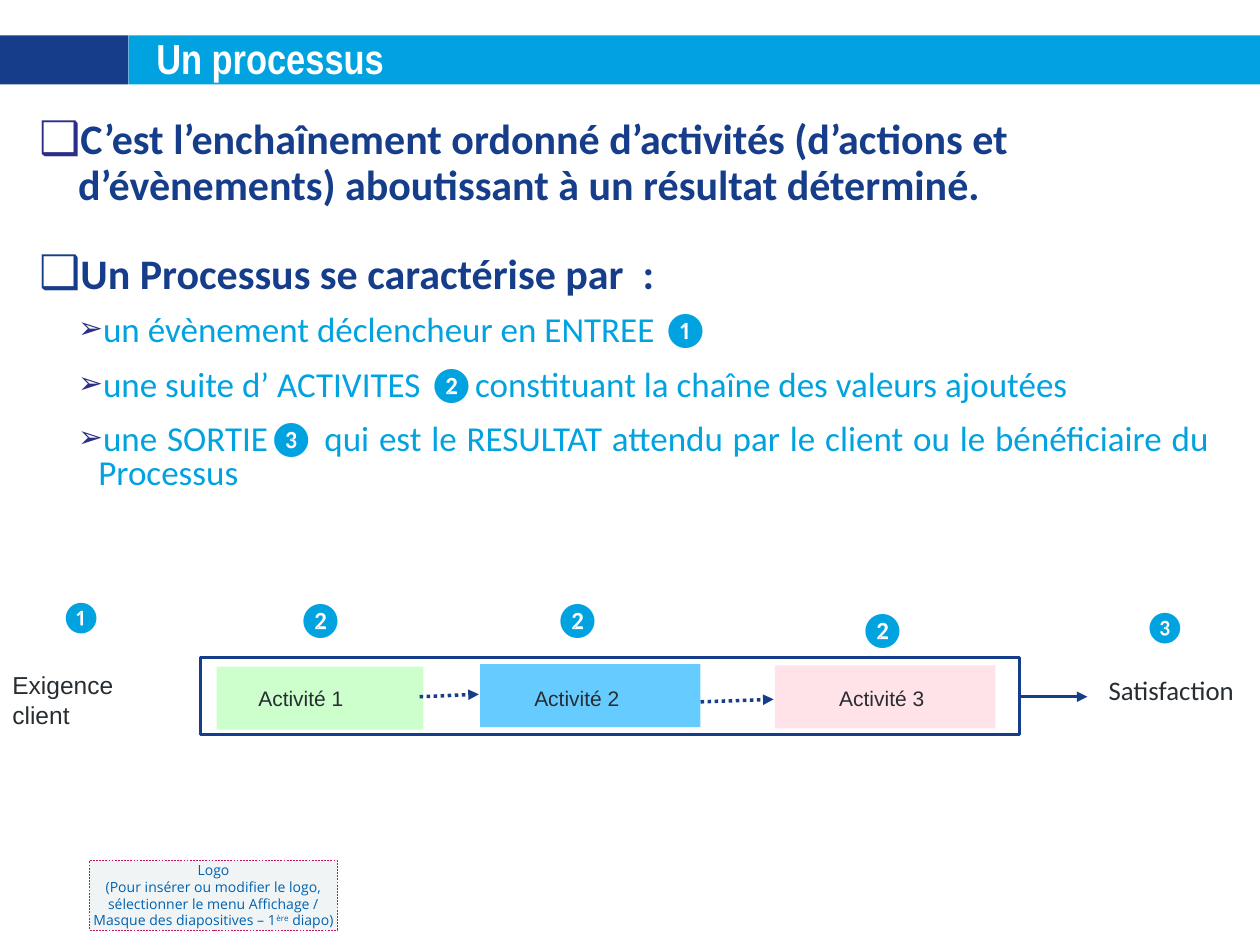
"""Build the slide that defines a process and draws its chain of activities."""
from dataclasses import dataclass
from typing import Any, Optional

import lxml.etree
import pptx
import pptx.dml.color
import pptx.enum.dml
import pptx.enum.shapes
import pptx.enum.text
import pptx.oxml.ns
import pptx.util

NAVY, SKY, INK, VIOLET = "153D8A", "00A2E0", "272D31", "2D2D8A"
WIDTH, HEIGHT = pptx.util.Inches(10), pptx.util.Inches(7.5)
ALIGN = pptx.enum.text.PP_ALIGN
ANCHOR = pptx.enum.text.MSO_ANCHOR
DASH = pptx.enum.dml.MSO_LINE


@dataclass(frozen=True)
class Area:
    """Left, top, width and height in percent of the slide."""
    left: float
    top: float
    width: float
    height: float


@dataclass(frozen=True)
class Style:
    """Size, colour, typeface and weight of a text."""
    size: float
    color: str
    face: str = "Calibri"
    bold: bool = False


@dataclass(frozen=True)
class Label:
    """A text box of the diagram."""
    text: str
    area: Area
    style: Style
    inset: float = 0.02
    anchor: Any = ANCHOR.TOP
    align: Any = ALIGN.LEFT


@dataclass(frozen=True)
class Box:
    """A rectangle with an optional fill and outline."""
    area: Area
    fill: Optional[str] = None
    line: Optional[str] = None
    weight: float = 2
    dash: Any = None


@dataclass(frozen=True)
class Arrow:
    """An arrow between two points in percent of the slide."""
    start: tuple[float, float]
    end: tuple[float, float]
    dash: Any = None


@dataclass(frozen=True)
class Level:
    """Look of one level of the list."""
    style: Style
    bullet: str
    bullet_size: int
    margin: float
    hang: float
    line_spacing: float
    before: float
    after: float


@dataclass(frozen=True)
class Item:
    """One entry of the list."""
    text: str
    level: int
    align: Any = ALIGN.LEFT
    bullet_color: str = VIOLET


LEVELS = (
    Level(Style(24, NAVY, bold=True), "❑", 110, 0.31, 0.31, 0.9, 15, 10),
    Level(Style(20, SKY), "➢", 85, 0.47, 0.16, 0.8, 0, 12),
)
ITEMS = (
    Item("C’est l’enchaînement ordonné d’activités (d’actions et d’évènements) "
         "aboutissant à un résultat déterminé.", 0),
    Item("Un Processus se caractérise par  :", 0, bullet_color=NAVY),
    Item("un évènement déclencheur en ENTREE ❶", 1),
    Item("une suite d’ ACTIVITES ❷constituant la chaîne des valeurs ajoutées", 1, ALIGN.JUSTIFY),
    Item("une SORTIE❸ qui est le RESULTAT attendu par le client ou le bénéficiaire "
         "du Processus", 1, ALIGN.JUSTIFY),
)
BARS = (Box(Area(0, 3.73, 10.2, 5.2), NAVY), Box(Area(10.2, 3.73, 89.8, 5.2), SKY))
LOGO = Box(Area(7.1, 91.07, 19.7, 7.33), "F1F4F5", "C01662", 0.25, DASH.DASH)
LOGO_TEXT = (("Logo",), ("(Pour insérer ou modifier le logo, sélectionner le menu Affichage / "
                         "Masque des diapositives – 1", "ère", " diapo)"))
PROCESS = (
    Box(Area(15.9, 69.6, 65, 8.13), line=NAVY),
    Box(Area(17.2, 70.53, 16.4, 6.67), "CCFFCC"),
    Box(Area(38.1, 70.27, 17.5, 6.67), "66CCFF"),
    Box(Area(61.5, 70.4, 17.5, 6.67), "FFE3E8"),
)
ARROWS = (
    Arrow((81, 73.73), (86.3, 73.73)),
    Arrow((33.3, 73.73), (38, 73.47), DASH.ROUND_DOT),
    Arrow((55.6, 74.27), (61.4, 74), DASH.ROUND_DOT),
)
ACTIVITY, END_MARK, STEP_MARK = Style(12, INK, "Arial"), Style(18, SKY), Style(20, SKY)
LABELS = (
    Label("Exigence client", Area(0, 71.87, 15, 4.4), Style(14, INK, "Arial"), 0.1, ANCHOR.MIDDLE),
    Label("Satisfaction", Area(85.9, 68.8, 14.1, 8.4), Style(15.3, INK), 0.1,
          ANCHOR.MIDDLE, ALIGN.CENTER),
    *(Label(f"Activité {number}", Area(left, 71.87, 8.5, 4), ACTIVITY)
      for number, left in enumerate((20.3, 42.2, 66.4), 1)),
    *(Label(mark, Area(left, top, 4.6, 5.8), style) for mark, left, top, style in (
        ("❶", 4.6, 62.53, END_MARK), ("❷", 23.4, 62.53, STEP_MARK), ("❷", 43.8, 62.53, STEP_MARK),
        ("❷", 68, 63.6, STEP_MARK), ("❸", 90.6, 63.6, END_MARK))),
)


def color(value: str) -> pptx.dml.color.RGBColor:
    """Turn a hex string into a colour."""
    return pptx.dml.color.RGBColor.from_string(value)


def across(share: float) -> int:
    """Turn a share of the slide's width into a length."""
    return int(WIDTH * share / 100)


def down(share: float) -> int:
    """Turn a share of the slide's height into a length."""
    return int(HEIGHT * share / 100)


def bounds(area: Area) -> tuple[int, int, int, int]:
    """Turn an area into left, top, width and height."""
    return across(area.left), down(area.top), across(area.width), down(area.height)


def place(shape: Any, area: Area) -> None:
    """Move a placeholder to an area, in front of what is drawn so far."""
    shape.left, shape.top, shape.width, shape.height = bounds(area)
    shape.element.getparent().append(shape.element)


def add_element(parent: Any, tag: str, **attributes: str) -> Any:
    """Append a drawing element to its parent."""
    return lxml.etree.SubElement(parent, pptx.oxml.ns.qn(tag), attributes)


def format_runs(paragraph: Any, style: Style) -> None:
    """Apply a style to every run of a paragraph."""
    for run in paragraph.runs:
        font = run.font
        font.size, font.name, font.bold = pptx.util.Pt(style.size), style.face, style.bold
        font.color.rgb = color(style.color)


def set_frame(frame: Any, side: float, edge: float, anchor: Any) -> None:
    """Set wrapping, insets and anchor of a text frame."""
    frame.word_wrap, frame.auto_size = True, pptx.enum.text.MSO_AUTO_SIZE.NONE
    frame.margin_left = frame.margin_right = pptx.util.Inches(side)
    frame.margin_top = frame.margin_bottom = pptx.util.Inches(edge)
    frame.vertical_anchor = anchor


def set_line(line: Any, value: str, weight: float, dash: Any) -> None:
    """Set colour, weight and dash of a line."""
    line.color.rgb, line.width = color(value), pptx.util.Pt(weight)
    if dash is not None:
        line.dash_style = dash


def draw_box(slide: Any, box: Box) -> Any:
    """Draw a rectangle."""
    shape = slide.shapes.add_shape(pptx.enum.shapes.MSO_SHAPE.RECTANGLE, *bounds(box.area))
    shape.shadow.inherit = False
    if box.fill:
        shape.fill.solid()
        shape.fill.fore_color.rgb = color(box.fill)
    else:
        shape.fill.background()
    if box.line:
        set_line(shape.line, box.line, box.weight, box.dash)
    else:
        shape.line.fill.background()
    return shape


def draw_logo_box(slide: Any) -> None:
    """Draw the dashed box with the instructions for the logo."""
    frame = draw_box(slide, LOGO).text_frame
    set_frame(frame, 0, 0.04, ANCHOR.MIDDLE)
    for index, texts in enumerate(LOGO_TEXT):
        paragraph = frame.add_paragraph() if index else frame.paragraphs[0]
        paragraph.alignment = ALIGN.CENTER
        for text in texts:
            paragraph.add_run().text = text
        format_runs(paragraph, Style(8, "0062AE", "Open Sans"))
    frame.paragraphs[1].runs[1].font._element.set("baseline", "30000")


def draw_arrow(slide: Any, arrow: Arrow) -> None:
    """Draw an arrow with a triangular head."""
    connector = slide.shapes.add_connector(
        pptx.enum.shapes.MSO_CONNECTOR.STRAIGHT, across(arrow.start[0]), down(arrow.start[1]),
        across(arrow.end[0]), down(arrow.end[1]))
    set_line(connector.line, NAVY, 2, arrow.dash)
    add_element(connector.line._get_or_add_ln(), "a:tailEnd", type="triangle")
    add_element(connector.element.spPr, "a:effectLst")


def draw_label(slide: Any, label: Label) -> None:
    """Draw a text box."""
    frame = slide.shapes.add_textbox(*bounds(label.area)).text_frame
    set_frame(frame, label.inset, 0.05, label.anchor)
    frame.text = label.text
    frame.paragraphs[0].alignment = label.align
    format_runs(frame.paragraphs[0], label.style)


def fill_title(title: Any) -> None:
    """Write the title on its bar."""
    place(title, Area(11.4, 2.8, 88.6, 6.67))
    title.text_frame.text = "Un processus"
    set_frame(title.text_frame, 0.1, 0.05, ANCHOR.TOP)
    title.text_frame.paragraphs[0].alignment = ALIGN.LEFT
    format_runs(title.text_frame.paragraphs[0], Style(24, "FFFFFF", "Arial Narrow", True))


def fill_list(body: Any) -> None:
    """Write the bulleted list."""
    place(body, Area(3.1, 12.53, 92.9, 49.47))
    frame = body.text_frame
    set_frame(frame, 0, 0, ANCHOR.TOP)
    frame.text = "\n".join(item.text for item in ITEMS)
    for index, (paragraph, item) in enumerate(zip(frame.paragraphs, ITEMS)):
        level = LEVELS[item.level]
        paragraph.level, paragraph.alignment = item.level, item.align
        paragraph.line_spacing = level.line_spacing
        paragraph.space_before = pptx.util.Pt(level.before if index else 0)
        paragraph.space_after = pptx.util.Pt(level.after)
        properties = paragraph._p.get_or_add_pPr()
        properties.set("marL", str(pptx.util.Inches(level.margin)))
        properties.set("indent", str(-pptx.util.Inches(level.hang)))
        add_element(add_element(properties, "a:buClr"), "a:srgbClr", val=item.bullet_color)
        add_element(properties, "a:buSzPct", val=str(level.bullet_size * 1000))
        add_element(properties, "a:buChar", char=level.bullet)
        format_runs(paragraph, level.style)


def main() -> None:
    """Build and save the presentation."""
    presentation = pptx.Presentation()
    presentation.slide_width, presentation.slide_height = WIDTH, HEIGHT
    slide = presentation.slides.add_slide(presentation.slide_layouts[1])
    for bar in BARS:
        draw_box(slide, bar)
    draw_logo_box(slide)
    fill_title(slide.shapes.title)
    fill_list(slide.placeholders[1])
    for box in PROCESS:
        draw_box(slide, box)
    for arrow in ARROWS:
        draw_arrow(slide, arrow)
    for label in LABELS:
        draw_label(slide, label)
    presentation.save("out.pptx")


if __name__ == "__main__":
    main()
